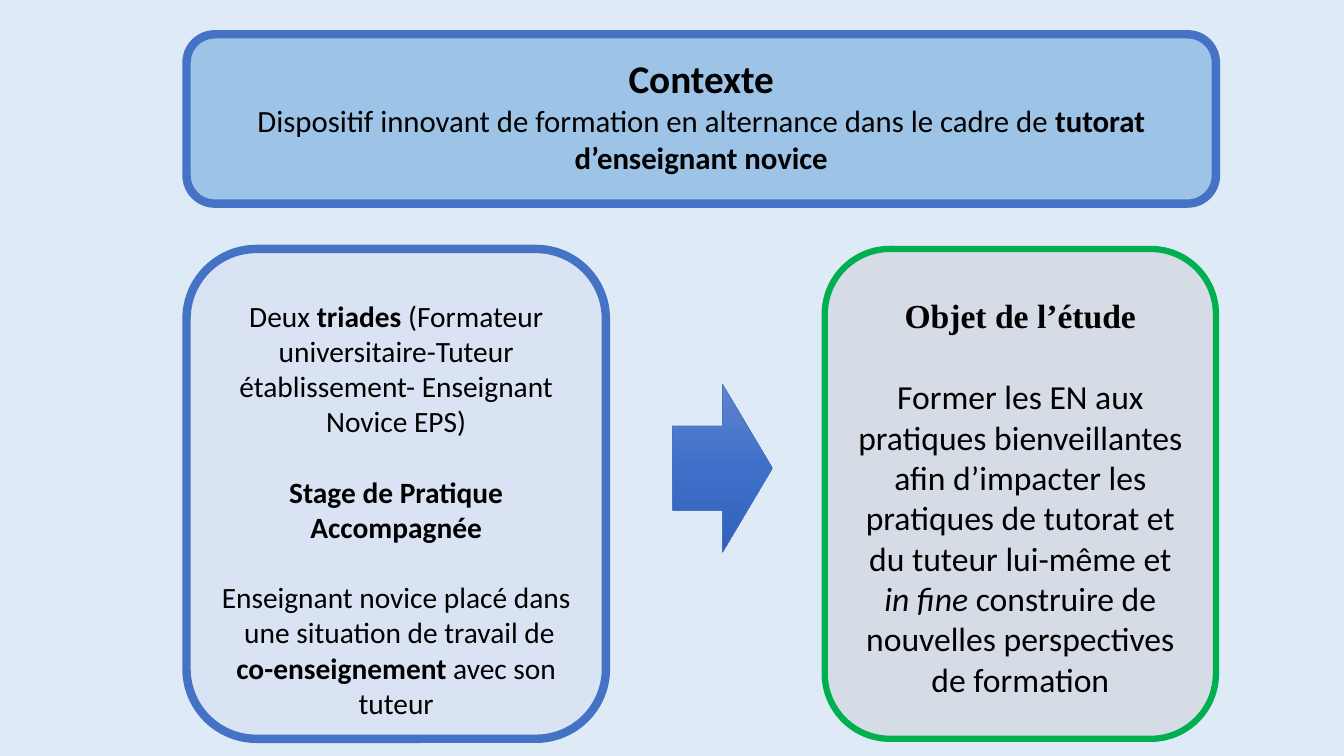
from copy import deepcopy

from pptx import Presentation
from pptx.dml.color import RGBColor
from pptx.enum.shapes import MSO_SHAPE
from pptx.enum.text import MSO_ANCHOR, PP_ALIGN
from pptx.oxml.ns import qn
from pptx.util import Inches, Pt

ROUNDED = MSO_SHAPE.ROUNDED_RECTANGLE
RIGHT_ARROW = MSO_SHAPE.RIGHT_ARROW
TOP = MSO_ANCHOR.TOP
CENTER = PP_ALIGN.CENTER

COLORS = {
    "background": "DEEBF7",
    "context": "9DC3E6",
    "triads": "DAE3F3",
    "aim": "D6DCE5",
    "blue": "4472C4",
    "green": "00B050",
    "text": "000000",
    "arrow_top": "6183CB",
    "arrow_middle": "3E70CA",
    "arrow_bottom": "3062BB",
}
BODY, SERIF = "Calibri", "Times New Roman"


def color(name):
    return RGBColor.from_string(COLORS[name])


def add_panel(position, fill, border, border_width, top_inset, paragraphs):
    panel = slide.shapes.add_shape(ROUNDED, *[Inches(v) for v in position])
    panel.shadow.inherit = False
    panel.fill.solid()
    panel.fill.fore_color.rgb = color(fill)
    panel.line.color.rgb = color(border)
    panel.line.width = Pt(border_width)
    frame = panel.text_frame
    frame.word_wrap = True
    frame.vertical_anchor = TOP
    frame.margin_top = Inches(top_inset)
    for index, (size, font, space_before, runs) in enumerate(paragraphs):
        paragraph = frame.add_paragraph() if index else frame.paragraphs[0]
        paragraph.alignment = CENTER
        paragraph.space_before = Pt(space_before)
        for text, style in runs:
            run = paragraph.add_run()
            run.text = text
            run.font.size = Pt(size)
            run.font.name = font
            run.font.color.rgb = color("text")
            run.font.bold = style == "bold"
            run.font.italic = style == "italic"


prs = Presentation()
prs.slide_width, prs.slide_height = Inches(13.33), Inches(7.5)
slide = prs.slides.add_slide(prs.slide_layouts[6])
slide.background.fill.solid()
slide.background.fill.fore_color.rgb = color("background")

add_panel((1.85, 0.34, 10.21, 1.68), "context", "blue", 6, 0.12, [
    (28, BODY, 0, [("Contexte", "bold")]),
    (22, BODY, 0, [
        ("Dispositif innovant de formation en alternance dans le cadre de ", ""),
        ("tutorat d’enseignant novice", "bold"),
    ]),
])

add_panel((1.85, 2.47, 4.16, 4.86), "triads", "blue", 6, 0.28, [
    (21, BODY, 0, [
        ("Deux ", ""),
        ("triades", "bold"),
        (" (Formateur universitaire-Tuteur établissement- Enseignant Novice EPS)", ""),
    ]),
    (21, BODY, 25, [("Stage de Pratique Accompagnée", "bold")]),
    (21, BODY, 25, [("Enseignant novice placé dans", "")]),
    (21, BODY, 0, [
        (" une situation de travail de ", ""),
        ("co-enseignement", "bold"),
        (" avec son tuteur", ""),
    ]),
])

add_panel((8.18, 2.47, 3.88, 4.86), "aim", "green", 4.5, 0.27, [
    (24, SERIF, 0, [("Objet de l’étude", "bold")]),
    (24, BODY, 29, [
        ("Former les EN aux pratiques bienveillantes afin d’impacter les "
         "pratiques de tutorat et du tuteur lui-même et ", ""),
        ("in fine ", "italic"),
        ("construire de nouvelles perspectives de formation", ""),
    ]),
])

arrow = slide.shapes.add_shape(
    RIGHT_ARROW, Inches(6.67), Inches(3.81), Inches(0.99), Inches(1.67))
arrow.shadow.inherit = False
arrow.line.color.rgb = color("blue")
arrow.line.width = Pt(0.5)
arrow.fill.gradient()
arrow.fill.gradient_angle = 270
stop_list = arrow.element.spPr.find(".//" + qn("a:gsLst"))
stop_list.append(deepcopy(stop_list[0]))
shades = ("arrow_top", "arrow_middle", "arrow_bottom")
for index, (stop, shade) in enumerate(zip(arrow.fill.gradient_stops, shades)):
    stop.position = index / 2
    stop.color.rgb = color(shade)

prs.save("out.pptx")
